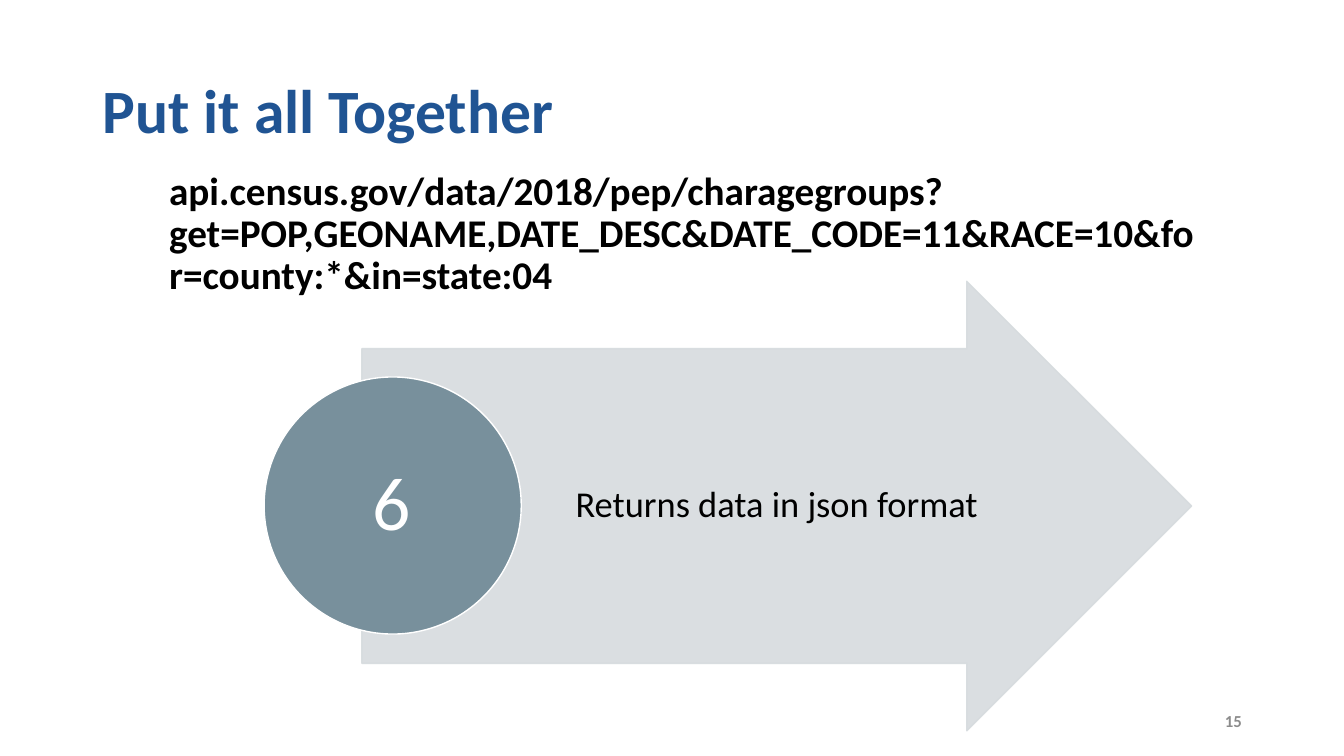
from dataclasses import dataclass

from lxml.etree import SubElement
from pptx import Presentation
from pptx.dml.color import RGBColor
from pptx.dml.fill import FillFormat
from pptx.enum.shapes import MSO_SHAPE
from pptx.enum.text import MSO_ANCHOR, PP_ALIGN
from pptx.oxml.ns import qn
from pptx.shapes.autoshape import Shape
from pptx.slide import Slide
from pptx.util import Inches, Pt

SLIDE_WIDTH = Inches(13.333)
SLIDE_HEIGHT = Inches(7.5)
FONT = "Calibri"
BLUE, BLACK, WHITE = "205493", "000000", "FFFFFF"
PALE_GREY, SLATE, PAGE_GREY = "D6DBDE", "78909C", "8C8C8C"


@dataclass(frozen=True)
class Area:
    """A rectangle in percent of the slide's width and height."""

    left: float
    top: float
    width: float
    height: float

    def lengths(self) -> tuple[int, int, int, int]:
        return (
            int(SLIDE_WIDTH * self.left / 100),
            int(SLIDE_HEIGHT * self.top / 100),
            int(SLIDE_WIDTH * self.width / 100),
            int(SLIDE_HEIGHT * self.height / 100),
        )


@dataclass(frozen=True)
class Step:
    number: str
    message: str
    arrow: Area
    message_area: Area
    circle: Area
    number_area: Area


JSON_STEP = Step(
    number="6",
    message="Returns data in json format",
    arrow=Area(26.93, 37.2, 61.73, 59.47),
    message_area=Area(42.3, 46.13, 34.58, 41.6),
    circle=Area(19.65, 49.87, 19.13, 34),
    number_area=Area(22.43, 54.93, 13.5, 24),
)


def paint(fill: FillFormat, color: str) -> None:
    fill.solid()
    fill.fore_color.rgb = RGBColor.from_string(color)


def set_opacity(shape: Shape, percent: int) -> None:
    """Make both the fill and the line of a shape translucent."""
    for color in shape._element.spPr.iter(qn("a:srgbClr")):
        SubElement(color, qn("a:alpha")).set("val", str(percent * 1000))


def add_text(
    slide: Slide,
    area: Area,
    text: str,
    *,
    size: float,
    color: str,
    bold: bool = False,
    align: PP_ALIGN = PP_ALIGN.LEFT,
    anchor: MSO_ANCHOR = MSO_ANCHOR.MIDDLE,
    line_spacing: float = 0.9,
    insets: tuple[float, float, float, float] = (0.1, 0.05, 0.1, 0.05),
) -> None:
    frame = slide.shapes.add_textbox(*area.lengths()).text_frame
    frame.word_wrap = True
    frame.vertical_anchor = anchor
    frame.margin_left, frame.margin_top, frame.margin_right, frame.margin_bottom = map(
        Inches, insets
    )
    paragraph = frame.paragraphs[0]
    paragraph.alignment = align
    paragraph.line_spacing = line_spacing
    run = paragraph.add_run()
    run.text = text
    run.font.name = FONT
    run.font.size = Pt(size)
    run.font.bold = bold
    run.font.color.rgb = RGBColor.from_string(color)


def add_figure(
    slide: Slide, preset: MSO_SHAPE, area: Area, fill: str, line: str
) -> Shape:
    figure = slide.shapes.add_shape(preset, *area.lengths())
    figure.shadow.inherit = False
    paint(figure.fill, fill)
    paint(figure.line.fill, line)
    figure.line.width = Pt(1)
    return figure


def add_step(slide: Slide, step: Step) -> None:
    arrow = add_figure(slide, MSO_SHAPE.RIGHT_ARROW, step.arrow, PALE_GREY, PALE_GREY)
    arrow.adjustments[0] = 0.7
    arrow.adjustments[1] = 0.5
    set_opacity(arrow, 90)
    add_text(slide, step.message_area, step.message, size=26, color=BLACK,
             insets=(0.07, 0.02, 0.04, 0.02))
    add_figure(slide, MSO_SHAPE.OVAL, step.circle, SLATE, WHITE)
    add_text(slide, step.number_area, step.number, size=54, color=WHITE,
             align=PP_ALIGN.CENTER, insets=(0.04, 0.04, 0.04, 0.04))


def main() -> None:
    presentation = Presentation()
    presentation.slide_width = SLIDE_WIDTH
    presentation.slide_height = SLIDE_HEIGHT
    slide = presentation.slides.add_slide(presentation.slide_layouts[6])

    add_text(slide, Area(6.9, 5.33, 86.25, 19.33), "Put it all Together",
             size=44, color=BLUE, bold=True)
    add_text(
        slide,
        Area(11.85, 22, 78, 66),
        "api.census.gov/data/2018/pep/charagegroups?get=POP,GEONAME,DATE_DESC"
        "&DATE_CODE=11&RACE=10&for=county:*&in=state:04",
        size=28, color=BLACK, bold=True, anchor=MSO_ANCHOR.TOP,
    )
    add_step(slide, JSON_STEP)
    add_text(slide, Area(70.65, 92.67, 22.5, 5.33), "15", size=12,
             color=PAGE_GREY, bold=True, align=PP_ALIGN.RIGHT, line_spacing=1.0)

    presentation.save("out.pptx")


if __name__ == "__main__":
    main()
